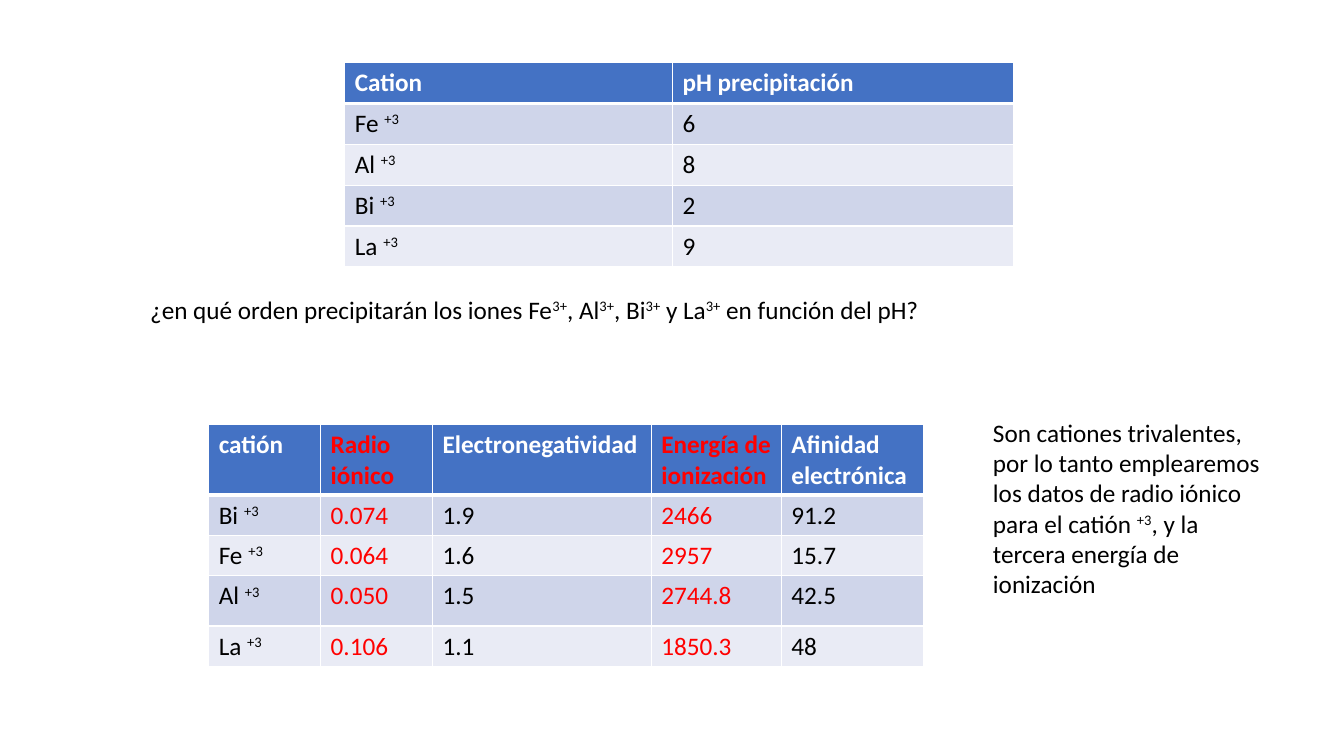
from lxml import etree
from pptx import Presentation
from pptx import util as u
from pptx.dml.color import RGBColor
from pptx.enum import text
from pptx.oxml.ns import qn

WHITE = RGBColor(0xFF, 0xFF, 0xFF)
BLACK = RGBColor(0, 0, 0)
RED = RGBColor(0xFF, 0, 0)
HEADER_BLUE = RGBColor(0x44, 0x72, 0xC4)
BANDS = (RGBColor(0xCF, 0xD5, 0xEA), RGBColor(0xE9, 0xEB, 0xF5))

PRECIPITATION = [
    ("Cation", "pH precipitación"),
    ("Fe ^+3", "6"),
    ("Al ^+3", "8"),
    ("Bi ^+3", "2"),
    ("La ^+3", "9"),
]
PROPERTIES = [
    ("catión", "Radio iónico", "Electronegatividad",
     "Energía de ionización", "Afinidad electrónica"),
    ("Bi ^+3", "0.074", "1.9", "2466", "91.2"),
    ("Fe ^+3", "0.064", "1.6", "2957", "15.7"),
    ("Al ^+3", "0.050", "1.5", "2744.8", "42.5"),
    ("La ^+3", "0.106", "1.1", "1850.3", "48"),
]
QUESTION = ("¿en qué orden precipitarán los iones Fe^3+^, Al^3+^, Bi^3+^"
            " y La^3+^ en función del pH?")
EXPLANATION = ("Son cationes trivalentes, por lo tanto emplearemos los datos de radio"
               " iónico para el catión ^+3^, y la tercera energía de ionización")


def write(frame, content, color=BLACK, bold=False):
    """Fill a text frame; the parts between ^ marks are superscripts."""
    font_format = {"name": "Calibri", "size": u.Pt(18), "bold": bold}
    for index, part in enumerate(content.split("^")):
        run = frame.paragraphs[0].add_run()
        run.text = part
        for key, value in font_format.items():
            setattr(run.font, key, value)
        run.font.color.rgb = color
        if index % 2:
            run.font._element.set("baseline", "30000")


def set_borders(cell, bottom_width, top_width):
    widths = {"lnL": 1, "lnR": 1, "lnT": top_width, "lnB": bottom_width}
    properties = cell._tc.get_or_add_tcPr()
    for position, (side, width) in enumerate(widths.items()):
        line = etree.Element(qn(f"a:{side}"), w=str(u.Pt(width)))
        fill = etree.SubElement(line, qn("a:solidFill"))
        etree.SubElement(fill, qn("a:srgbClr"), val=str(WHITE))
        properties.insert(position, line)


def add_data_table(slide, rows, left, top, widths, heights, red_columns=()):
    table = slide.shapes.add_table(
        len(rows), len(widths), u.Inches(left), u.Inches(top),
        u.Inches(sum(widths)), u.Inches(sum(heights))).table
    for column, width in zip(table.columns, widths):
        column.width = u.Inches(width)
    for row, height in zip(table.rows, heights):
        row.height = u.Inches(height)
    for r, values in enumerate(rows):
        header = r == 0
        for c, value in enumerate(values):
            cell = table.cell(r, c)
            cell.fill.solid()
            cell.fill.fore_color.rgb = HEADER_BLUE if header else BANDS[(r - 1) % 2]
            set_borders(cell, 3 if header else 1, 3 if r == 1 else 1)
            plain = WHITE if header else BLACK
            write(cell.text_frame, value, RED if c in red_columns else plain, header)


def add_note(slide, content, left, top, width, height):
    frame = slide.shapes.add_textbox(
        *(u.Inches(length) for length in (left, top, width, height))).text_frame
    frame.word_wrap = True
    frame.auto_size = text.MSO_AUTO_SIZE.SHAPE_TO_FIT_TEXT
    write(frame, content)


def main():
    deck = Presentation()
    deck.slide_width, deck.slide_height = u.Inches(13.33), u.Inches(7.5)
    slide = deck.slides.add_slide(deck.slide_layouts[6])
    add_data_table(slide, PRECIPITATION, 3.42, 0.62, (3.25, 3.38), [0.4] * 5)
    add_note(slide, QUESTION, 1.39, 2.87, 9.31, 0.4)
    add_data_table(slide, PROPERTIES, 2.07, 4.21, (1.11, 1.11, 2.17, 1.29, 1.41),
                   (0.7, 0.4, 0.4, 0.5, 0.4), red_columns=(1, 3))
    add_note(slide, EXPLANATION, 9.75, 4.09, 2.92, 1.92)
    deck.save("out.pptx")


if __name__ == "__main__":
    main()
